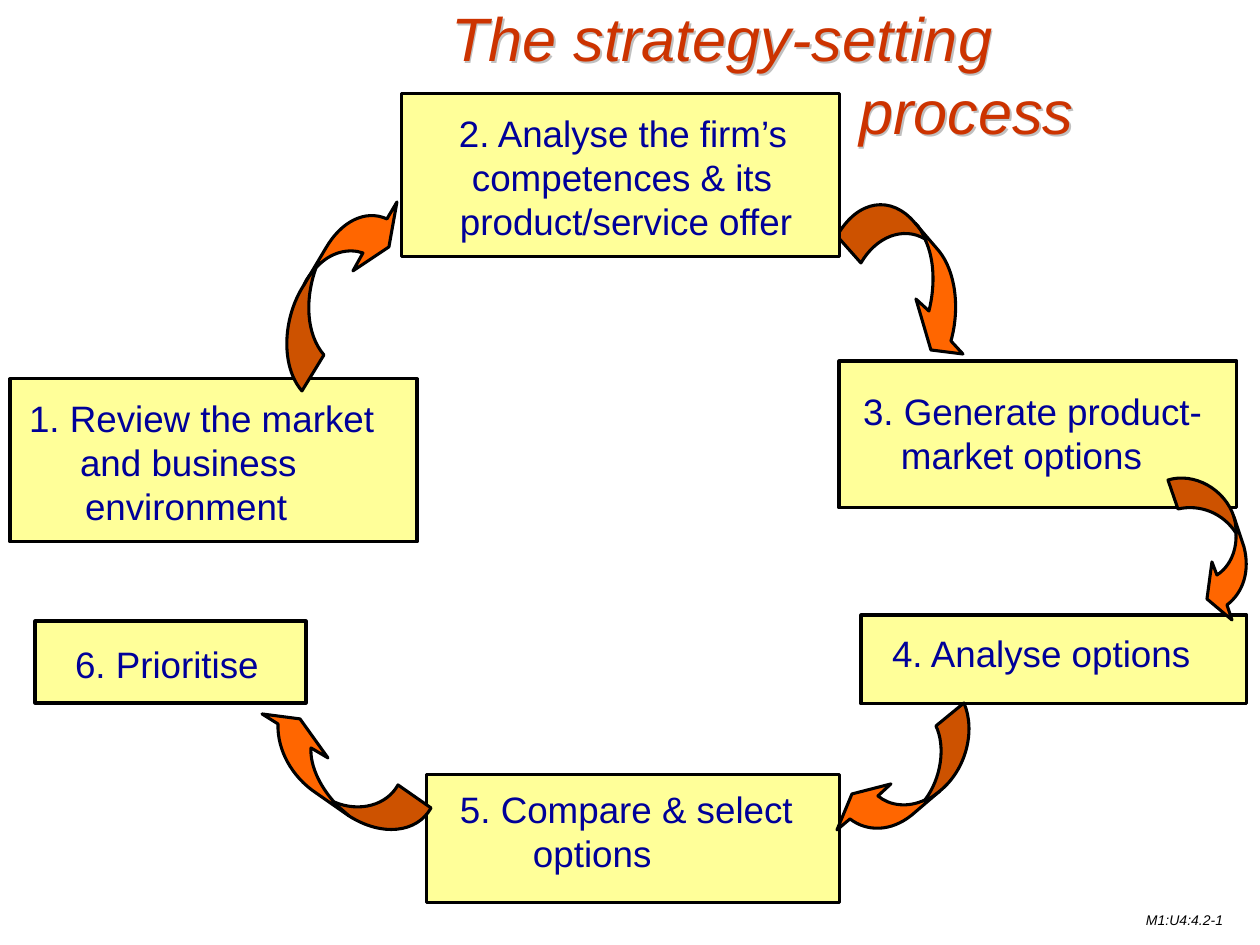
"""Builds the slide on the strategy-setting process cycle."""
from pptx import Presentation
from pptx import util as u
from pptx.dml.color import RGBColor
from pptx.enum import shapes, text
from pptx.oxml.ns import qn
from lxml import etree

SCALE = 914400 / 126
NAVY, YELLOW, BLACK = "000099", "FFFF99", "000000"
ORANGE, BROWN, RED, SILVER = "FF6600", "CD5200", "CC3300", "C0C0C0"
TITLE = [("The strategy-setting", 0), ("process", 408)]

STEPS = [
    ((839, 361, 398, 147), 389,
     [("3. Generate product-", 863), ("market options", 901)]),
    ((861, 615, 386, 89), 631, [("4. Analyse options", 892)]),
    ((427, 775, 413, 128), 787,
     [("5. Compare & select", 460), ("options", 533)]),
    ((35, 621, 271, 82), 642, [("6. Prioritise", 75)]),
    ((10, 379, 407, 163), 396,
     [("1. Review the market", 29), ("and business", 80), ("environment", 85)]),
]
TOP_STEP = ((402, 94, 438, 163), 111,
            [("2. Analyse the firm’s", 459), ("competences & its", 472),
             ("product/service offer", 460)])

ARROWS = [
    {"tail": [(302, 391), (281, 367), (282, 319), (304, 285)],
     "head": [(326, 248), (341, 222), (365, 209), (387, 219)],
     "tip": [(397, 202), (389, 247), (353, 271)],
     "inner": [(363, 253), (349, 248), (330, 252), (316, 268)],
     "back": [(305, 299), (306, 334), (324, 355)],
     "fold": [(307, 278), (311, 273)]},
    {"tail": [(837, 236), (858, 199), (892, 195), (915, 223)],
     "head": [(939, 251), (956, 272), (960, 309), (951, 341)],
     "tip": [(963, 354), (931, 350), (916, 299)],
     "inner": [(929, 311), (935, 287), (935, 260), (925, 239)],
     "back": [(903, 226), (876, 237), (861, 263)],
     "fold": [(919, 226), (922, 232)]},
    {"tail": [(1168, 480), (1194, 472), (1225, 489), (1234, 517)],
     "head": [(1244, 547), (1250, 570), (1244, 592), (1227, 605)],
     "tip": [(1232, 620), (1207, 599), (1212, 562)],
     "inner": [(1217, 575), (1231, 566), (1237, 549), (1236, 533)],
     "back": [(1223, 513), (1200, 504), (1178, 509)],
     "fold": [(1236, 523), (1236, 528)]},
    {"tail": [(964, 703), (976, 731), (966, 770), (940, 791)],
     "head": [(912, 815), (891, 832), (867, 832), (850, 819)],
     "tip": [(837, 830), (852, 794), (891, 784)],
     "inner": [(878, 796), (890, 806), (908, 808), (925, 800)],
     "back": [(941, 779), (946, 747), (936, 726)],
     "fold": [(935, 795), (930, 799)]},
    {"tail": [(431, 808), (417, 833), (382, 837), (349, 816)],
     "head": [(316, 793), (292, 777), (277, 750), (278, 724)],
     "tip": [(262, 714), (300, 719), (328, 758)],
     "inner": [(311, 748), (310, 765), (319, 785), (334, 802)],
     "back": [(360, 813), (387, 805), (398, 785)],
     "fold": [(344, 811), (339, 808)]},
]


def px(length):
    return u.Emu(round(length * SCALE))


def colour(value):
    return RGBColor.from_string(value)


def paint(shape, fill=None, line=None):
    shape.shadow.inherit = False
    if fill:
        shape.fill.solid()
        shape.fill.fore_color.rgb = colour(fill)
    else:
        shape.fill.background()
    if line:
        shape.line.color.rgb = colour(line)
        shape.line.width = u.Pt(1.75)
    else:
        shape.line.fill.background()


def write(shape, lines, size, ink, italic=False, top=0):
    frame = shape.text_frame
    frame.word_wrap = True
    frame.auto_size = text.MSO_AUTO_SIZE.NONE
    frame.vertical_anchor = text.MSO_ANCHOR.TOP
    frame.margin_left = frame.margin_right = frame.margin_bottom = 0
    frame.margin_top = px(top)
    for number, (words, indent) in enumerate(lines):
        line = frame.add_paragraph() if number else frame.paragraphs[0]
        line.text = words
        line.alignment = text.PP_ALIGN.LEFT
        line._p.get_or_add_pPr().set("marL", str(px(indent)))
        line.font.name = "Arial"
        line.font.size = u.Pt(size)
        line.font.italic = italic
        line.font.color.rgb = colour(ink)


def add_label(slide, box, lines, **style):
    label = slide.shapes.add_textbox(*map(px, box))
    write(label, lines, **style)


def add_title(slide):
    style = {"size": 35, "italic": True}
    add_label(slide, (453, 2, 645, 146), TITLE, ink=SILVER, **style)
    title = slide.shapes.title
    title.left, title.top, title.width, title.height = map(px, (451, 0, 645, 146))
    write(title, TITLE, ink=RED, **style)
    slide.shapes._spTree.append(title._element)


def add_step(slide, box, text_top, lines):
    left, top, _, _ = box
    step = slide.shapes.add_shape(shapes.MSO_SHAPE.RECTANGLE, *map(px, box))
    paint(step, YELLOW, BLACK)
    indented = [(words, edge - left) for words, edge in lines]
    write(step, indented, size=21, ink=NAVY, top=text_top - top)


def add_outline(slide, start, pieces, close=True, **look):
    """Draws pieces of one point as lines and of three points as curves."""
    points = [(px(x), px(y)) for piece in pieces for x, y in piece]
    builder = slide.shapes.build_freeform(*map(px, start))
    builder.add_line_segments(points, close=close)
    outline = builder.convert_to_shape()
    segments = iter(list(outline._element.iter(qn("a:lnTo"))))
    for piece in pieces:
        run = [next(segments) for _ in piece]
        if len(run) == 3:
            bend = etree.Element(qn("a:cubicBezTo"))
            run[0].addprevious(bend)
            for segment in run:
                bend.append(segment[0])
                segment.getparent().remove(segment)
    paint(outline, **look)


def add_arrow(slide, tail, head, tip, inner, back, fold):
    start, bend, seam = tail[0], tail[-1], inner[-1]
    crease = [*fold, seam]
    ribbon = [tail[1:], head[:1], head[1:], *([point] for point in tip),
              inner[:1], inner[1:], back]
    add_outline(slide, start, ribbon, fill=ORANGE)
    add_outline(slide, start, [tail[1:], crease, back], fill=BROWN)
    add_outline(slide, start, ribbon, line=BLACK)
    add_outline(slide, bend, [crease], close=False, line=BLACK)


def main():
    deck = Presentation()
    deck.slide_width, deck.slide_height = px(1260), px(945)
    slide = deck.slides.add_slide(deck.slide_layouts[5])
    add_title(slide)
    for step in STEPS:
        add_step(slide, *step)
    for arrow in ARROWS:
        add_arrow(slide, **arrow)
    add_step(slide, *TOP_STEP)
    add_label(slide, (1146, 911, 100, 22), [("M1:U4:4.2-1", 0)],
              size=8, ink=BLACK, italic=True)
    deck.save("out.pptx")


if __name__ == "__main__":
    main()
